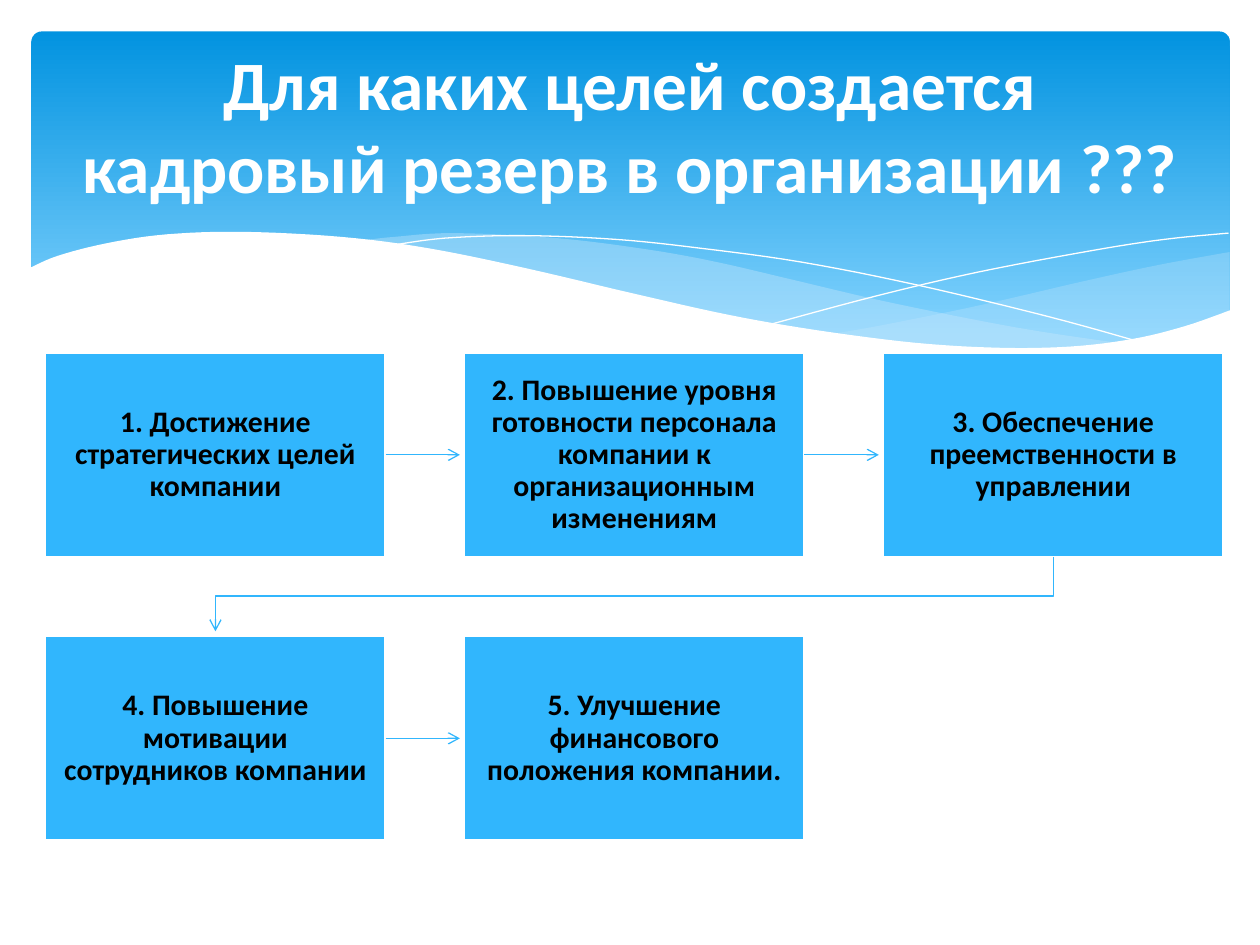
from itertools import chain

from lxml.etree import SubElement
from pptx import Presentation
from pptx.dml.color import RGBColor
from pptx.enum.shapes import MSO_CONNECTOR as Connector, MSO_SHAPE as Shape
from pptx.enum.text import MSO_ANCHOR as Anchor, PP_ALIGN as Align
from pptx.oxml.ns import qn
from pptx.util import Inches, Pt

WHITE = RGBColor(0xFF, 0xFF, 0xFF)
BLACK = RGBColor(0x00, 0x00, 0x00)
SKY = RGBColor(0x31, 0xB6, 0xFD)
DEEP_BLUE = RGBColor(0x02, 0x93, 0xE0)
LIGHT_BLUE = RGBColor(0x83, 0xD3, 0xFE)
PALE_BLUE = RGBColor(0xC6, 0xE7, 0xFC)

TITLE = "Для каких целей создается кадровый резерв в организации ???"
GOALS = [
    "1. Достижение стратегических целей компании",
    "2. Повышение уровня готовности персонала компании к организационным изменениям",
    "3. Обеспечение преемственности в управлении",
    "4. Повышение мотивации сотрудников компании",
    "5. Улучшение финансового положения компании.",
]

RIGHT_VEIL = [
    [(9.51, 1.75), (8.96, 1.85), (8.36, 1.98), (7.54, 2.17), (6.81, 2.32), (6.36, 2.4)],
    [(6.36, 2.4), (6.8, 2.46), (7.32, 2.51), (7.78, 2.53), (8.29, 2.51), (8.8, 2.44),
     (9.17, 2.34), (9.51, 2.22)],
]
CENTRE_VEIL = [
    [(8.68, 2.48), (7.82, 2.35), (6.81, 2.15), (6.04, 1.97), (5.44, 1.83), (4.89, 1.73),
     (4.17, 1.64), (3.36, 1.6), (2.88, 1.63), (2.61, 1.66)],
    [(2.61, 1.66), (3.17, 1.74), (3.79, 1.86), (4.66, 2.07), (5.41, 2.23), (6.09, 2.36),
     (6.7, 2.45), (7.23, 2.51), (7.71, 2.53), (8.13, 2.53), (8.68, 2.48)],
]
FALLING_LINE = [
    [(2.84, 1.7), (3.28, 1.64), (3.91, 1.62), (4.64, 1.65), (5.31, 1.72), (6.11, 1.83),
     (7.02, 2.01), (8.06, 2.26), (8.82, 2.47)],
]
RISING_LINE = [
    [(5.88, 2.32), (6.7, 2.1), (7.51, 1.91), (8.41, 1.74), (8.99, 1.65), (9.5, 1.6)],
]
WHITE_WAVE = [
    [(-0.02, 1.88), (0.21, 1.78), (0.6, 1.68), (1.07, 1.61), (1.68, 1.59), (2.46, 1.63),
     (3.15, 1.72), (3.93, 1.88), (4.78, 2.08), (5.54, 2.25), (6.23, 2.37), (7.01, 2.47),
     (7.68, 2.51), (8.25, 2.5), (8.74, 2.44), (9.15, 2.34), (9.52, 2.21)],
    [(9.52, 3.04), (-0.02, 3.04)],
]


def smooth(points, steps=6):
    padded = [points[0], *points, points[-1]]
    curve = [points[0]]
    for before, start, end, after in zip(padded, padded[1:], padded[2:], padded[3:]):
        for step in range(1, steps + 1):
            t = step / steps
            curve.append(tuple(
                b + ((c - a) * t + (2 * a - 5 * b + 4 * c - d) * t**2
                     + (3 * b - a - 3 * c + d) * t**3) / 2
                for a, b, c, d in zip(before, start, end, after)))
    return curve


def set_format(target, values):
    for name, value in values.items():
        setattr(target, name, value)


def paint(shape, fill=None, opacity=None, line=None, width=0):
    shape.shadow.inherit = False
    if fill is None:
        shape.fill.background()
    else:
        shape.fill.solid()
        shape.fill.fore_color.rgb = fill
    if opacity is not None:
        color = shape.fill._xPr.find(qn("a:solidFill"))[0]
        SubElement(color, qn("a:alpha"), val=str(opacity * 1000))
    if line is None:
        shape.line.fill.background()
    else:
        style_line(shape.line, line, width)


def style_line(line, color, width):
    line.color.rgb = color
    line.width = Pt(width)


def add_arrowhead(line):
    SubElement(line._get_or_add_ln(), qn("a:tailEnd"), type="arrow")


def add_outline(slide, points, closed):
    places = [(Inches(x), Inches(y)) for x, y in points]
    builder = slide.shapes.build_freeform(*places[0])
    builder.add_line_segments(places[1:], close=closed)
    return builder.convert_to_shape()


def write_text(shape, text, size, color, margin, spacing):
    frame = shape.text_frame
    set_format(frame, {"word_wrap": True, "vertical_anchor": Anchor.MIDDLE,
                       "margin_left": margin, "margin_right": margin,
                       "margin_top": margin, "margin_bottom": margin})
    paragraph = frame.paragraphs[0]
    set_format(paragraph, {"alignment": Align.CENTER, "line_spacing": spacing})
    run = paragraph.add_run()
    run.text = text
    set_format(run.font, {"name": "Calibri", "size": Pt(size), "bold": True})
    run.font.color.rgb = color


def add_wave_band(slide, left, top, width, height):
    band = slide.shapes.add_shape(
        Shape.ROUNDED_RECTANGLE, Inches(left), Inches(top), Inches(width), Inches(height))
    band.adjustments[0] = 0.03
    paint(band)
    band.fill.gradient()
    band.fill.gradient_angle = 270
    stops = [(0, DEEP_BLUE), (0.9, LIGHT_BLUE)]
    for stop, (position, color) in zip(band.fill.gradient_stops, stops):
        stop.position = position
        stop.color.rgb = color
    layers = [
        (RIGHT_VEIL, {"fill": PALE_BLUE, "opacity": 29}),
        (CENTRE_VEIL, {"fill": PALE_BLUE, "opacity": 40}),
        (FALLING_LINE, {"line": WHITE}),
        (RISING_LINE, {"line": WHITE}),
        (WHITE_WAVE, {"fill": WHITE}),
    ]
    for edges, look in layers:
        curve = chain.from_iterable(smooth(edge) for edge in edges)
        outline = add_outline(slide, [(left + x, top + y) for x, y in curve], "fill" in look)
        paint(outline, **look)


def add_title(slide, left, top, width, height):
    box = slide.shapes.add_textbox(
        Inches(left), Inches(top), Inches(width), Inches(height))
    write_text(box, TITLE, 39.6, WHITE, Inches(0.1), 1.0)


def add_goal(slide, text, left, top, width, height):
    box = slide.shapes.add_shape(
        Shape.RECTANGLE, Inches(left), Inches(top), Inches(width), Inches(height))
    paint(box, fill=SKY, line=WHITE, width=1.25)
    write_text(box, text, 17, BLACK, Inches(0.13), 0.9)
    return box


def add_side_arrow(slide, box, left, middle, length):
    arrow = slide.shapes.add_connector(
        Connector.STRAIGHT, Inches(left), Inches(middle), Inches(left + length), Inches(middle))
    arrow.begin_connect(box, 3)
    style_line(arrow.line, SKY, 0.75)
    add_arrowhead(arrow.line)
    SubElement(arrow._element.spPr, qn("a:effectLst"))


def add_return_arrow(slide, start_x, end_x, top, length):
    bend = top + 0.31
    points = [(start_x, top), (start_x, bend), (end_x, bend), (end_x, top + length)]
    arrow = add_outline(slide, points, False)
    paint(arrow, line=SKY, width=0.75)
    add_arrowhead(arrow.line)


def add_goal_flow(slide, left, top, width, height, columns=3):
    box_width, box_height, arrow_length = 2.7, 1.62, 0.59
    column_step = (width - box_width) / (columns - 1)
    row_step = height - box_height
    for index, goal in enumerate(GOALS):
        row, column = divmod(index, columns)
        x, y = left + column * column_step, top + row * row_step
        box = add_goal(slide, goal, x, y, box_width, box_height)
        if index == len(GOALS) - 1:
            continue
        if column < columns - 1:
            add_side_arrow(slide, box, x + box_width, y + box_height / 2, arrow_length)
        else:
            add_return_arrow(slide, x + box_width / 2, left + box_width / 2,
                             y + box_height, arrow_length)


def main():
    presentation = Presentation()
    set_format(presentation, {"slide_width": Inches(10), "slide_height": Inches(7.5)})
    slide = presentation.slides.add_slide(presentation.slide_layouts[6])
    add_wave_band(slide, 0.25, 0.25, 9.51, 2.7)
    add_goal_flow(slide, 0.36, 2.8, 9.35, 3.87)
    add_title(slide, 0.5, 0.3, 9, 1.37)
    presentation.save("out.pptx")


if __name__ == "__main__":
    main()
